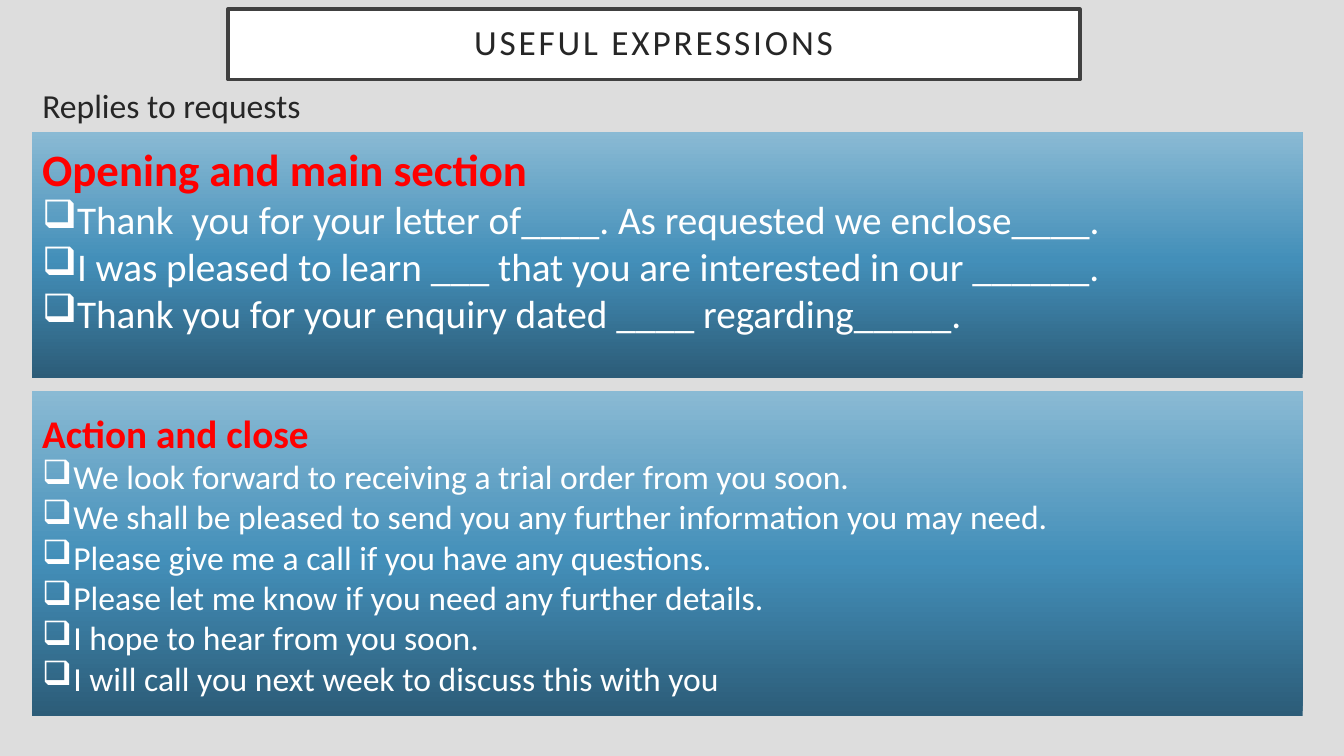
from copy import deepcopy

from lxml import etree
from pptx import Presentation
from pptx.dml.color import RGBColor
from pptx.enum.shapes import MSO_SHAPE
from pptx.enum.text import MSO_ANCHOR, MSO_AUTO_SIZE, PP_ALIGN
from pptx.oxml.ns import qn
from pptx.util import Inches, Pt

RECT = MSO_SHAPE.RECTANGLE
MIDDLE, TOP = MSO_ANCHOR.MIDDLE, MSO_ANCHOR.TOP
LEFT, CENTER = PP_ALIGN.LEFT, PP_ALIGN.CENTER
NO_FIT = MSO_AUTO_SIZE.NONE

GREY = RGBColor(0xDD, 0xDD, 0xDD)
WHITE = RGBColor(0xFF, 0xFF, 0xFF)
INK = RGBColor(0x26, 0x26, 0x26)
FRAME = RGBColor(0x40, 0x40, 0x40)
RED = RGBColor(0xFF, 0x00, 0x00)
STOPS = [
    (0, RGBColor(0x2C, 0x5C, 0x78)),
    (0.48, RGBColor(0x43, 0x8F, 0xB9)),
    (1, RGBColor(0x8A, 0xBA, 0xD4)),
]
FONT = "Calibri"

OPENING = [
    "Thank  you for your letter of____. As requested we enclose____.",
    "I was pleased to learn ___ that you are interested in our ______.",
    "Thank you for your enquiry dated ____ regarding_____.",
]
CLOSING = [
    "We look forward to receiving a trial order from you soon.",
    "We shall be pleased to send you any further information you may need.",
    "Please give me a call if you have any questions.",
    "Please let me know if you need any further details.",
    "I hope to hear from you soon.",
    "I will call you next week to discuss this with you",
]


def place(shape, box):
    """Move a shape to a box of left, top, width and height in inches."""
    shape.left, shape.top, shape.width, shape.height = map(Inches, box)


def style(para, size, color, bold=False):
    """Format every run of a paragraph."""
    for run in para.runs:
        font = run.font
        font.name, font.size, font.bold = FONT, Pt(size), bold
        font.color.rgb = color


def bullet(para, mark=None, indent=0):
    """Give a paragraph a hanging bullet, or none."""
    props = para._p.get_or_add_pPr()
    props.set("marL", str(Inches(indent)))
    props.set("indent", str(-Inches(indent)))
    if mark:
        etree.SubElement(props, qn("a:buChar")).set("char", mark)
    else:
        etree.SubElement(props, qn("a:buNone"))


def shade(shape):
    """Fill a shape with the blue gradient, dark at the bottom."""
    shape.fill.gradient()
    shape.fill.gradient_angle = 90
    stops = shape._element.spPr.find(".//" + qn("a:gsLst"))
    stops.append(deepcopy(stops[-1]))
    for stop, (pos, color) in zip(shape.fill.gradient_stops, STOPS):
        stop.position = pos
        stop.color.rgb = color


def add_title(slide, box, text):
    """Put the framed heading in the title placeholder."""
    title = slide.shapes.title
    place(title, box)
    title.fill.solid()
    title.fill.fore_color.rgb = WHITE
    title.line.color.rgb = FRAME
    title.line.width = Pt(2.5)
    frame = title.text_frame
    frame.text = text
    frame.auto_size = NO_FIT
    frame.vertical_anchor = MIDDLE
    frame.margin_left = frame.margin_right = Inches(0.2)
    frame.margin_top = frame.margin_bottom = Inches(0.2)
    para = frame.paragraphs[0]
    para.alignment, para.line_spacing = CENTER, 0.9
    style(para, 25.2, INK)
    para.runs[0].font._element.set("spc", "200")


def add_lead(slide, box, text):
    """Put the lead line in the body placeholder."""
    body = slide.placeholders[1]
    place(body, box)
    frame = body.text_frame
    frame.text = text
    frame.auto_size = NO_FIT
    frame.vertical_anchor = TOP
    para = frame.paragraphs[0]
    para.space_before = Pt(10)
    bullet(para)
    style(para, 24, INK)


def add_panel(slide, box, head, items, size, foot=0.05):
    """Draw a gradient panel with a red heading and a bulleted list."""
    panel = slide.shapes.add_shape(RECT, *map(Inches, box))
    panel.shadow.inherit = False
    panel.line.fill.background()
    shade(panel)
    frame = panel.text_frame
    frame.word_wrap = True
    frame.vertical_anchor = MIDDLE
    frame.margin_bottom = Inches(foot)
    para = frame.paragraphs[0]
    para.text = head
    para.alignment = LEFT
    style(para, size + 4, RED, True)
    for item in items:
        para = frame.add_paragraph()
        para.text = item
        para.alignment = LEFT
        bullet(para, "❑", 0.31)
        style(para, size, WHITE)


def main():
    """Build the slide and save it."""
    deck = Presentation()
    deck.slide_width, deck.slide_height = Inches(13.33), Inches(7.5)
    slide = deck.slides.add_slide(deck.slide_layouts[1])
    slide.background.fill.solid()
    slide.background.fill.fore_color.rgb = GREY
    left, width = 0.32, 12.6
    add_title(slide, (2.26, 0.09, 8.45, 0.7), "USEFUL EXPRESSIONS")
    add_lead(slide, (left, 0.79, width, 6.49), "Replies to requests")
    add_panel(slide, (left, 1.31, width, 2.44),
              "Opening and main section", OPENING, 28, 0.36)
    add_panel(slide, (left, 3.88, width, 3.22),
              "Action and close", CLOSING, 24)
    deck.save("out.pptx")


if __name__ == "__main__":
    main()
